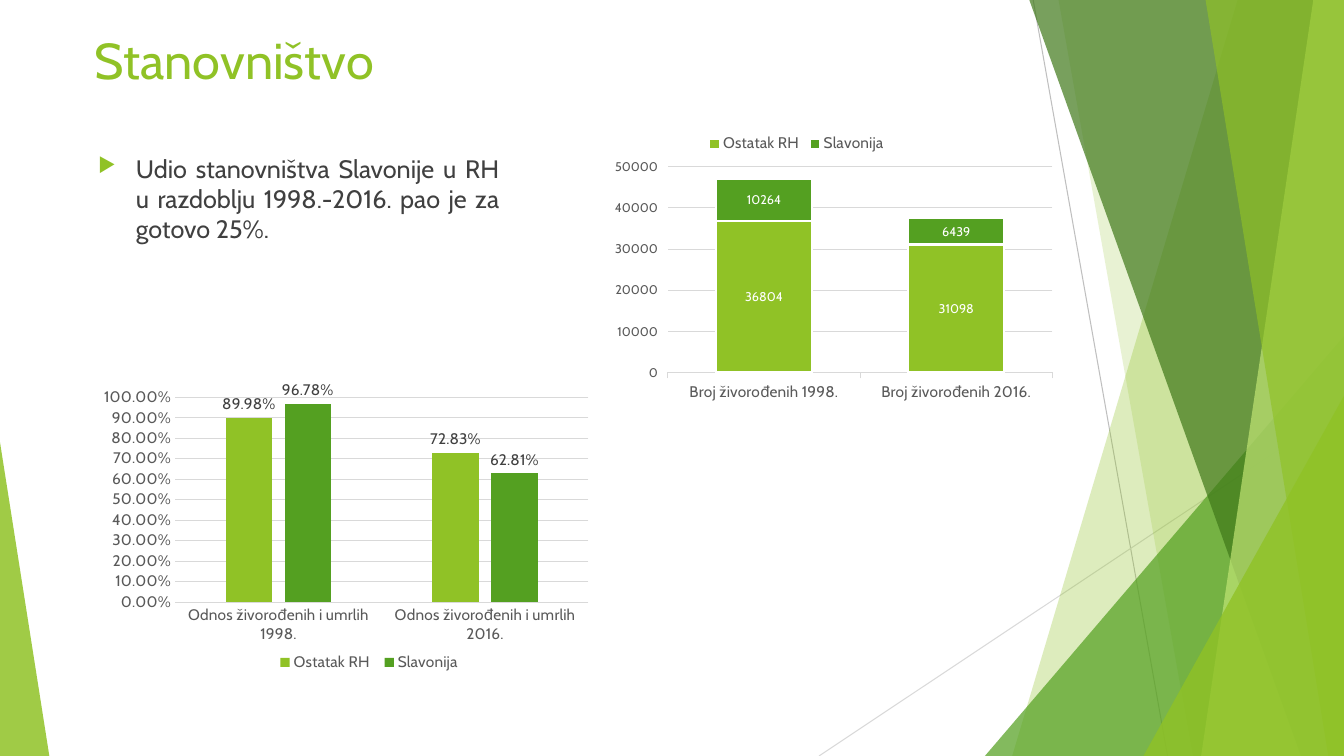
from dataclasses import dataclass
from typing import NamedTuple

from lxml.etree import SubElement
from pptx import Presentation
from pptx.chart.data import CategoryChartData
from pptx.dml.color import RGBColor
from pptx.enum.chart import XL_CHART_TYPE as ChartType
from pptx.enum.chart import XL_LABEL_POSITION as LabelPos
from pptx.enum.chart import XL_LEGEND_POSITION as LegendPos
from pptx.enum.chart import XL_TICK_MARK as Tick
from pptx.enum.shapes import MSO_CONNECTOR as Connector
from pptx.enum.shapes import MSO_SHAPE as Shape
from pptx.enum.text import PP_ALIGN as Align
from pptx.oxml.ns import qn
from pptx.util import Pt

PX = 9525
WIDTH, HEIGHT = 1280, 720


@dataclass(frozen=True)
class Theme:
    font: str = "Cabin"
    lime: str = "90C226"
    green: str = "54A021"
    dark: str = "3F7819"
    pale: str = "C0E474"
    text: str = "404040"
    axis: str = "595959"
    grid: str = "D9D9D9"
    ray: str = "BFBFBF"
    white: str = "FFFFFF"
    title_size: int = 36
    body_size: int = 18
    chart_size: int = 11
    small_size: int = 9
    hairline: float = 0.75


T = Theme()


class Box(NamedTuple):
    x: int
    y: int
    w: int
    h: int


class Ray(NamedTuple):
    x1: int
    y1: int
    x2: int
    y2: int
    color: str


class Band(NamedTuple):
    top: int
    bottom: int
    color: str
    alpha: int


class Corner(NamedTuple):
    box: Box
    apex: int
    color: str
    alpha: int


class Frame(NamedTuple):
    x: float
    y: float
    w: float
    h: float


@dataclass(frozen=True)
class ColumnChart:
    kind: ChartType
    box: Box
    categories: tuple
    series: tuple
    number_format: str
    top: float
    step: float
    gap: int
    overlap: int
    tick: Tick
    value_size: int
    label_size: int
    label_color: str
    label_pos: LabelPos
    legend_pos: LegendPos
    plot_frame: Frame
    legend_frame: Frame
    outline: float = 0


RAYS = (Ray(984, 0, 1112, 720, T.ray), Ray(1280, 387, 780, 720, T.grid))
DECOR = (
    Band(1179, 964, T.lime, 30),
    Band(1008, 1136, T.lime, 20),
    Corner(Box(938, 320, 342, 400), 1, T.green, 72),
    Band(980, 1239, T.dark, 70),
    Band(1251, 1144, T.pale, 70),
    Band(1148, 1265, T.lime, 65),
    Corner(Box(1089, 377, 191, 343), 1, T.lime, 80),
    Corner(Box(0, 421, 47, 299), 0, T.lime, 85),
)
BIRTHS = ColumnChart(
    ChartType.COLUMN_STACKED, Box(580, 112, 431, 276),
    ("Broj živorođenih 1998.", "Broj živorođenih 2016."),
    (("Ostatak RH", (36804, 31098)), ("Slavonija", (10264, 6439))),
    "General", 50000, 10000, 100, 100, Tick.OUTSIDE,
    T.small_size, T.small_size, T.white, LabelPos.CENTER, LegendPos.TOP,
    Frame(0.13, 0.17, 0.85, 0.71), Frame(0.21, 0.05, 0.41, 0.08), 1.5)
RATIOS = ColumnChart(
    ChartType.COLUMN_CLUSTERED, Box(90, 363, 480, 288),
    ("Odnos živorođenih i umrlih 1998.", "Odnos živorođenih i umrlih 2016."),
    (("Ostatak RH", (0.8998, 0.7283)), ("Slavonija", (0.9678, 0.6281))),
    "0.00%", 1, 0.1, 219, -27, Tick.NONE,
    T.chart_size, T.chart_size, T.text, LabelPos.OUTSIDE_END, LegendPos.BOTTOM,
    Frame(0.16, 0.05, 0.82, 0.68), Frame(0.35, 0.89, 0.39, 0.08))


def emu(box: Box) -> list[int]:
    return [v * PX for v in box]


def style_font(font, size: int, color: str) -> None:
    font.name, font.size = T.font, Pt(size)
    font.color.rgb = RGBColor.from_string(color)


def style_line(line, color: str, width: float) -> None:
    line.color.rgb = RGBColor.from_string(color)
    line.width = Pt(width)


def draw_ray(s, ray: Ray) -> None:
    sp = s.shapes.add_connector(
        Connector.STRAIGHT, ray.x1 * PX, ray.y1 * PX, ray.x2 * PX, ray.y2 * PX)
    style_line(sp.line, ray.color, T.hairline)
    SubElement(sp._element.spPr, qn("a:effectLst"))


def draw_decor(s, item: Band | Corner) -> None:
    if isinstance(item, Band):
        builder = s.shapes.build_freeform(item.top, -1, scale=float(PX))
        builder.add_line_segments(
            [(WIDTH, -1), (WIDTH, HEIGHT), (item.bottom, HEIGHT)], close=True)
        sp = builder.convert_to_shape()
    else:
        sp = s.shapes.add_shape(Shape.ISOSCELES_TRIANGLE, *emu(item.box))
        sp.adjustments[0] = item.apex
    sp.shadow.inherit = False
    sp.line.fill.background()
    sp.fill.solid()
    sp.fill.fore_color.rgb = RGBColor.from_string(item.color)
    color = sp._element.spPr.find(".//" + qn("a:srgbClr"))
    SubElement(color, qn("a:alpha"), val=str(item.alpha * 1000))


def draw_text(s, box: Box, text: str, size: int, color: str):
    tf = s.shapes.add_textbox(*emu(box)).text_frame
    tf.word_wrap = True
    p = tf.paragraphs[0]
    p.text = text
    style_font(p.runs[0].font, size, color)
    return p


def add_bullet(p) -> None:
    p.alignment = Align.JUSTIFY
    p.space_before = Pt(10)
    pPr = p._p.get_or_add_pPr()
    pPr.set("marL", str(36 * PX))
    pPr.set("indent", str(-36 * PX))
    SubElement(SubElement(pPr, qn("a:buClr")), qn("a:srgbClr"), val=T.lime)
    SubElement(pPr, qn("a:buSzPct"), val="80000")
    SubElement(pPr, qn("a:buChar"), char="▶")


def place(parent, index: int, frame: Frame, inner: bool) -> None:
    for old in parent.findall(qn("c:layout")):
        parent.remove(old)
    layout = SubElement(parent, qn("c:layout"))
    parent.insert(index, layout)
    manual = SubElement(layout, qn("c:manualLayout"))
    if inner:
        SubElement(manual, qn("c:layoutTarget"), val="inner")
    for mode in ("xMode", "yMode"):
        SubElement(manual, qn(f"c:{mode}"), val="edge")
    for name, value in frame._asdict().items():
        SubElement(manual, qn(f"c:{name}"), val=str(value))


def draw_chart(s, spec: ColumnChart) -> None:
    data = CategoryChartData(number_format=spec.number_format)
    data.categories = spec.categories
    for name, values in spec.series:
        data.add_series(name, values)
    chart = s.shapes.add_chart(spec.kind, *emu(spec.box), data).chart
    chart.has_title = False
    style_font(chart.font, T.chart_size, T.axis)

    cat, val = chart.category_axis, chart.value_axis
    cat.major_tick_mark = val.major_tick_mark = spec.tick
    style_font(cat.tick_labels.font, T.chart_size, T.axis)
    style_font(val.tick_labels.font, spec.value_size, T.axis)
    style_line(cat.format.line, T.grid, T.hairline)
    style_line(val.major_gridlines.format.line, T.grid, T.hairline)
    val.format.line.fill.background()
    val.minimum_scale, val.maximum_scale, val.major_unit = 0, spec.top, spec.step
    val.tick_labels.number_format = spec.number_format
    val.tick_labels.number_format_is_linked = False

    plot = chart.plots[0]
    plot.vary_by_categories = False
    plot.gap_width, plot.overlap = spec.gap, spec.overlap
    for series, color in zip(plot.series, (T.lime, T.green)):
        series.format.fill.solid()
        series.format.fill.fore_color.rgb = RGBColor.from_string(color)
        if spec.outline:
            style_line(series.format.line, T.white, spec.outline)
        labels = series.data_labels
        labels.show_value = True
        labels.position = spec.label_pos
        labels.number_format = spec.number_format
        labels.number_format_is_linked = False
        style_font(labels.font, spec.label_size, spec.label_color)

    chart.has_legend = True
    chart.legend.position = spec.legend_pos
    chart.legend.include_in_layout = False
    style_font(chart.legend.font, T.chart_size, T.axis)
    place(chart._chartSpace.find(".//" + qn("c:plotArea")), 0, spec.plot_frame, True)
    place(chart.legend._element, 1, spec.legend_frame, False)


def main() -> None:
    prs = Presentation()
    prs.slide_width, prs.slide_height = WIDTH * PX, HEIGHT * PX
    s = prs.slides.add_slide(prs.slide_layouts[6])
    for ray in RAYS:
        draw_ray(s, ray)
    for item in DECOR:
        draw_decor(s, item)
    draw_text(s, Box(81, 23, 666, 138), "Stanovništvo", T.title_size, T.lime)
    add_bullet(draw_text(
        s, Box(84, 141, 401, 173),
        "Udio stanovništva Slavonije u RH u razdoblju 1998.-2016. pao je za gotovo 25%.",
        T.body_size, T.text))
    for chart in (BIRTHS, RATIOS):
        draw_chart(s, chart)
    prs.save("out.pptx")


if __name__ == "__main__":
    main()
